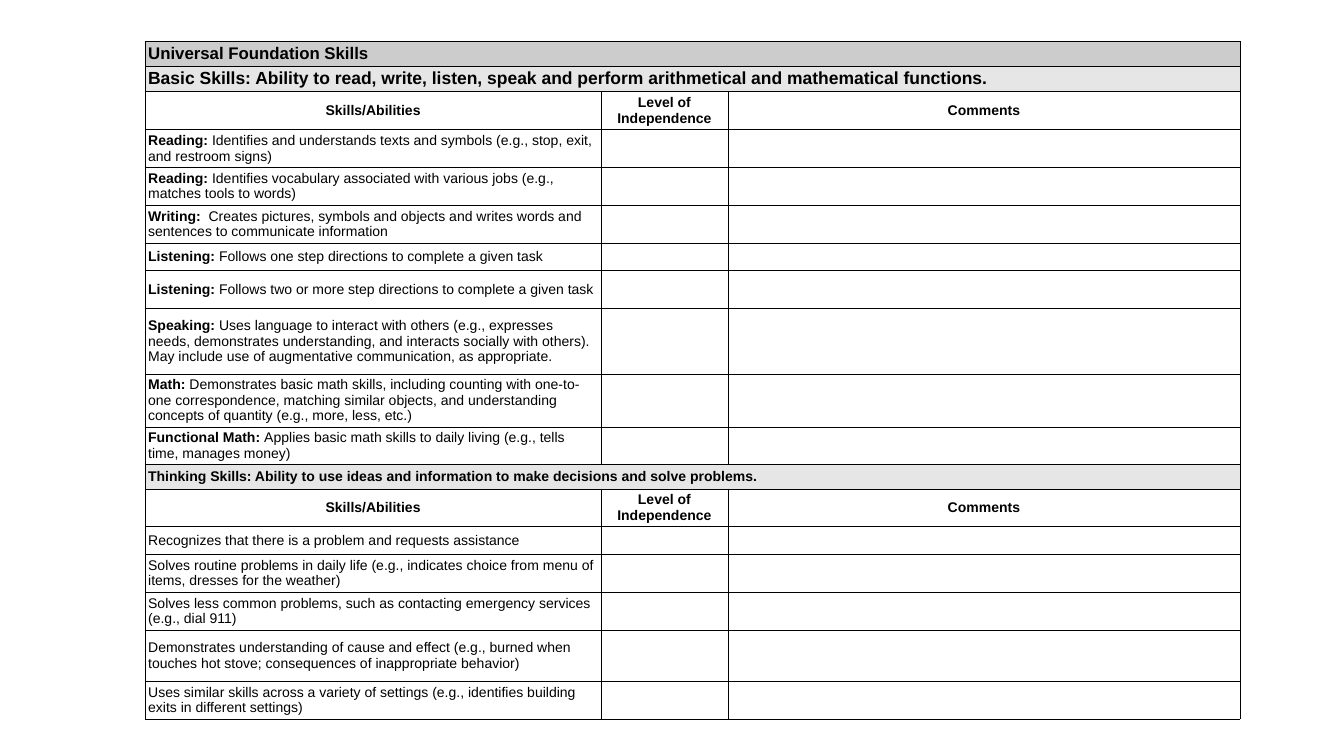
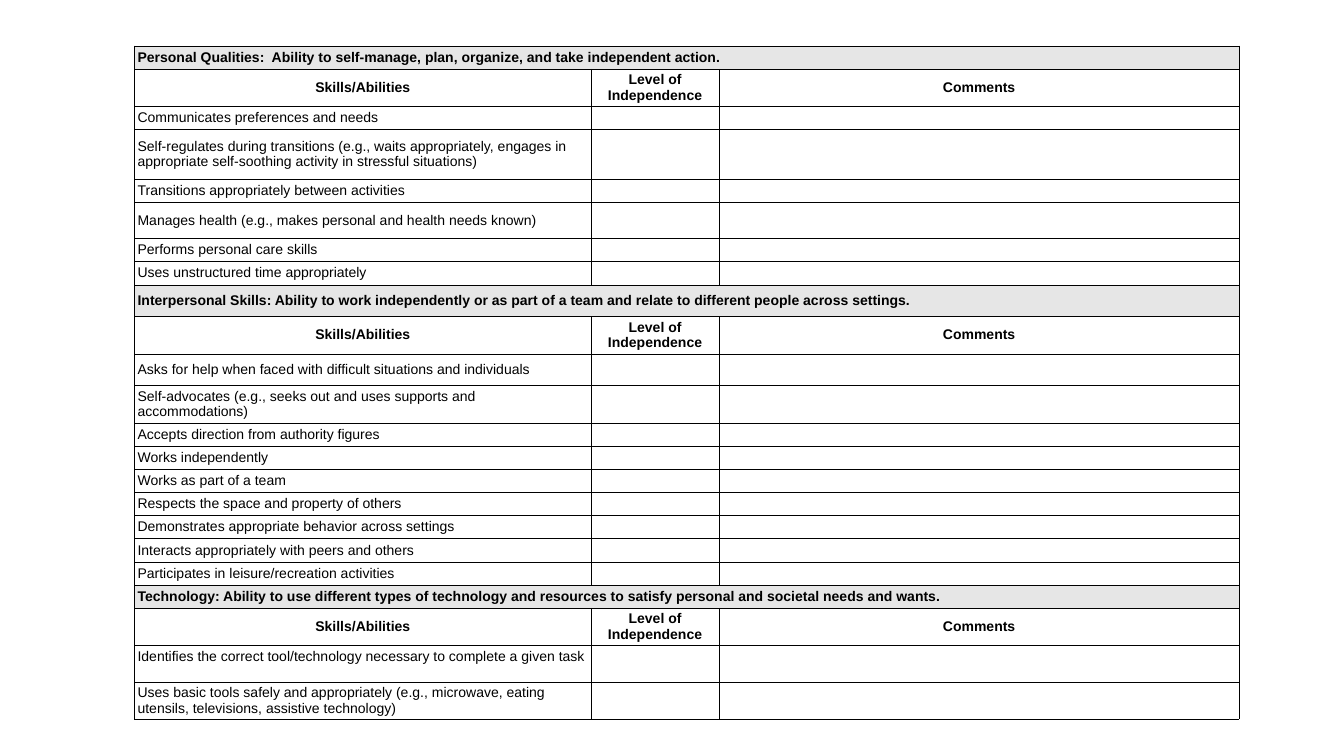
import pptx
import pptx.util
import pptx.dml.color
import pptx.enum.text
import pptx.oxml
import pptx.oxml.ns

PX = 9144
WIDE, HIGH = 2667, 1500
PAD = 6
FONT = "Arial"
HUES = {"ink": "000000", "top": "CCCCCC", "band": "E6E6E6"}
HEADS = ("Skills/Abilities", "Level of Independence", "Comments")
ALIGN = pptx.enum.text.PP_ALIGN
MID = pptx.enum.text.MSO_ANCHOR.MIDDLE
TOP = pptx.enum.text.MSO_ANCHOR.TOP

PAGES = [
    {
        "left": 288, "top": 82, "cols": (905, 251, 1017), "head": 75,
        "title": (48, "Universal Foundation Skills"),
        "parts": [
            {
                "band": (48, 25, ALIGN.LEFT, "Basic Skills: Ability to read, write, listen, speak and perform "
                         "arithmetical and mathematical functions."),
                "rows": [
                    (75, "Reading:", " Identifies and understands texts and symbols (e.g., stop, exit, "
                     "and restroom signs)"),
                    (75, "Reading: ", "Identifies vocabulary associated with various jobs (e.g., "
                     "matches tools to words)"),
                    (75, "Writing:", "  Creates pictures, symbols and objects and writes words and "
                     "sentences to communicate information"),
                    (55, "Listening:", " Follows one step directions to complete a given task"),
                    (75, "Listening:", " Follows two or more step directions to complete a given task"),
                    (130, "Speaking:", " Uses language to interact with others (e.g., expresses needs, "
                     "demonstrates understanding, and interacts socially with others).  "
                     "May include use of augmentative communication, as appropriate."),
                    (102, "Math:", " Demonstrates basic math skills, including counting with one-to-one "
                     "correspondence, matching similar objects, and understanding concepts of "
                     "quantity (e.g., more, less, etc.)"),
                    (75, "Functional Math: ", "Applies basic math skills to daily living (e.g., tells "
                     "time, manages money)"),
                ],
            },
            {
                "band": (48, 20, ALIGN.JUSTIFY, "Thinking Skills: Ability to use ideas and information to make "
                         "decisions and solve problems."),
                "rows": [
                    (55, "", "Recognizes that there is a problem and requests assistance"),
                    (75, "", "Solves routine problems in daily life (e.g., indicates choice from "
                     "menu of items, dresses for the weather)"),
                    (75, "", "Solves less common problems, such as contacting emergency services "
                     "(e.g., dial 911)"),
                    (102, "", "Demonstrates understanding of cause and effect (e.g., burned when "
                     "touches hot stove; consequences of inappropriate behavior)"),
                    (75, "", "Uses similar skills across a variety of settings (e.g., identifies "
                     "building exits in different settings)"),
                ],
            },
        ],
    },
    {
        "left": 267, "top": 91, "cols": (906, 254, 1032), "head": 72,
        "parts": [
            {
                "band": (46, 20, ALIGN.LEFT, "Personal Qualities:  Ability to self-manage, plan, organize, and "
                         "take independent action."),
                "rows": [
                    (46, "", "Communicates preferences and needs"),
                    (98, "", "Self-regulates during transitions (e.g., waits appropriately, engages "
                     "in appropriate self-soothing activity in stressful situations)"),
                    (46, "", "Transitions appropriately between activities"),
                    (72, "", "Manages health (e.g., makes personal and health needs known)"),
                    (46, "", "Performs personal care skills"),
                    (46, "", "Uses unstructured time appropriately"),
                ],
            },
            {
                "band": (63, 20, ALIGN.JUSTIFY, "Interpersonal Skills: Ability to work independently or as part "
                         "of a team and relate to different people across settings."),
                "rows": [
                    (63, "", "Asks for help when faced with difficult situations and individuals"),
                    (72, "", "Self-advocates (e.g., seeks out and uses supports and accommodations)"),
                    (46, "", "Accepts direction from authority figures"),
                    (46, "", "Works independently"),
                    (46, "", "Works as part of a team"),
                    (46, "", "Respects the space and property of others"),
                    (46, "", "Demonstrates appropriate behavior across settings"),
                    (46, "", "Interacts appropriately with peers and others"),
                    (46, "", "Participates in leisure/recreation activities"),
                ],
            },
            {
                "band": (46, 20, ALIGN.JUSTIFY, "Technology: Ability to use different types of technology and "
                         "resources to satisfy personal and societal needs and wants."),
                "anchor": TOP,
                "rows": [
                    (72, "", "Identifies the correct tool/technology necessary to complete a given task"),
                    (72, "", "Uses basic tools safely and appropriately (e.g., microwave, eating "
                     "utensils, televisions, assistive technology)"),
                ],
            },
        ],
    },
]


def write(cell, lead, text="", size=20, align=ALIGN.LEFT, anchor=MID):
    cell.vertical_anchor = anchor
    para = cell.text_frame.paragraphs[0]
    para.alignment = align
    for words, bold in ((lead, True), (text, False)):
        if words:
            run = para.add_run()
            run.text = words
            run.font.name = FONT
            run.font.size = pptx.util.Pt(size)
            run.font.bold = bold
            run.font.color.rgb = pptx.dml.color.RGBColor.from_string(HUES["ink"])


def frame(cell):
    cell.margin_left = cell.margin_right = PAD * PX
    cell.margin_top = cell.margin_bottom = PAD * PX
    props = cell._tc.get_or_add_tcPr()
    for side in "LRTB":
        props.append(pptx.oxml.parse_xml(
            f'<a:ln{side} {pptx.oxml.ns.nsdecls("a")} w="6350"><a:solidFill>'
            f'<a:srgbClr val="{HUES["ink"]}"/></a:solidFill></a:ln{side}>'))
    cell.fill.background()


def span(cells, hue, text, size, align=ALIGN.LEFT, anchor=MID):
    cells[0].merge(cells[-1])
    for cell in cells:
        cell.fill.solid()
        cell.fill.fore_color.rgb = pptx.dml.color.RGBColor.from_string(HUES[hue])
    write(cells[0], text, size=size, align=align, anchor=anchor)


def plan(page):
    if "title" in page:
        high, text = page["title"]
        yield high, "top", (text, 24, ALIGN.LEFT, TOP)
    for part in page["parts"]:
        high, size, align, text = part["band"]
        yield high, "band", (text, size, align)
        yield page["head"], "head", HEADS
        for high, lead, text in part["rows"]:
            yield high, "skill", (lead, text, 20, ALIGN.LEFT, part.get("anchor", MID))


def build(deck, page):
    slide = deck.slides.add_slide(deck.slide_layouts[6])
    lines = list(plan(page))
    cols = page["cols"]
    tall = sum(line[0] for line in lines)
    table = slide.shapes.add_table(
        len(lines), len(cols), page["left"] * PX, page["top"] * PX,
        sum(cols) * PX, tall * PX).table
    table.first_row = table.horz_banding = False
    for col, width in zip(table.columns, cols):
        col.width = width * PX
    for row, (high, kind, data) in zip(table.rows, lines):
        row.height = high * PX
        cells = list(row.cells)
        for cell in cells:
            frame(cell)
        if kind == "head":
            for cell, text in zip(cells, data):
                write(cell, text, align=ALIGN.CENTER)
        elif kind == "skill":
            write(cells[0], *data)
        else:
            span(cells, kind, *data)


def main():
    deck = pptx.Presentation()
    deck.slide_width, deck.slide_height = WIDE * PX, HIGH * PX
    for page in PAGES:
        build(deck, page)
    deck.save("out.pptx")


if __name__ == "__main__":
    main()
